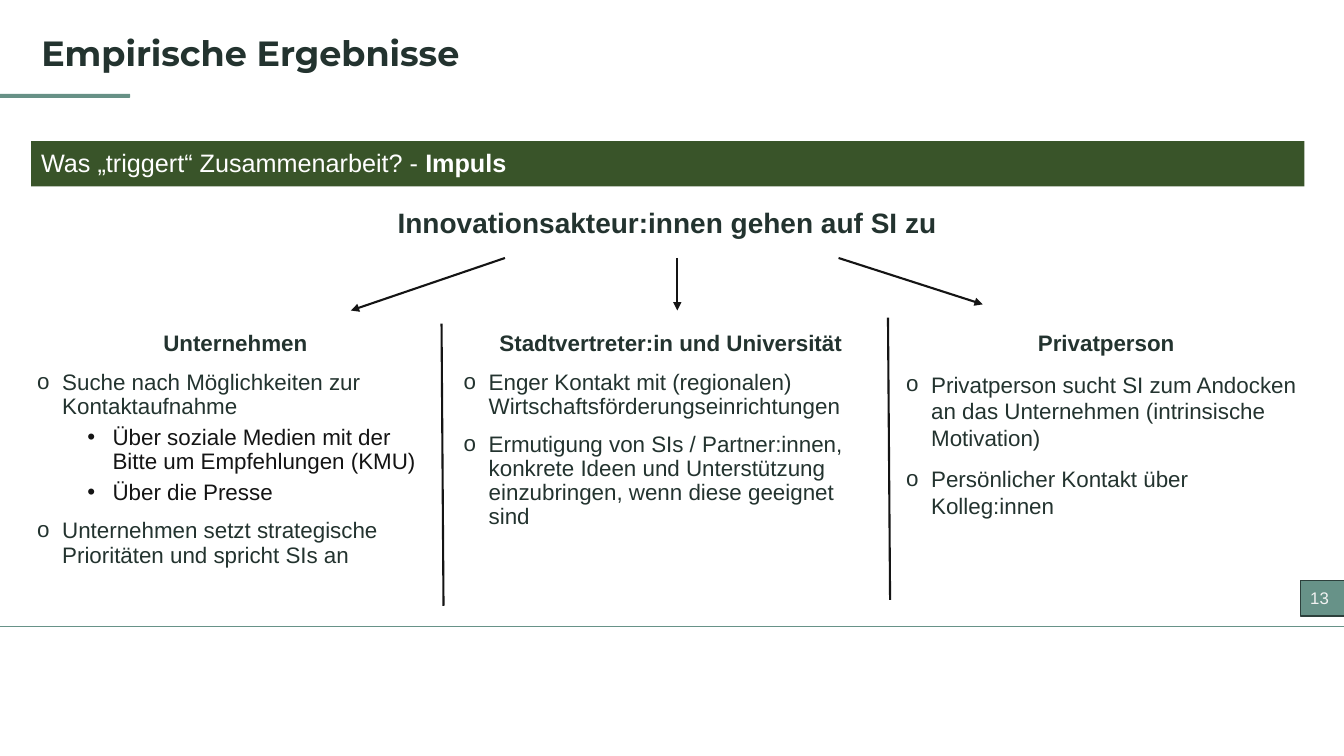
from dataclasses import dataclass

from lxml import etree
from pptx import Presentation
from pptx import util as u
from pptx.dml import color
from pptx.enum import shapes, text
from pptx.oxml import ns


@dataclass(frozen=True)
class Theme:
    dark: str = "23332F"
    ink: str = "141414"
    sage: str = "679288"
    mark: str = "679186"
    edge: str = "2D403C"
    green: str = "395429"
    white: str = "FFFFFF"
    pale: str = "F2F2F2"
    head: str = "Montserrat"
    body: str = "Arial"
    title: int = 25
    lead: int = 20
    bar: int = 18
    base: int = 16
    small: int = 12


@dataclass(frozen=True)
class Box:
    left: float
    top: float
    width: float
    height: float

    def place(self) -> tuple:
        return tuple(u.Pt(n) for n in (self.left, self.top, self.width, self.height))


@dataclass(frozen=True)
class Item:
    words: str
    deep: bool = False


@dataclass(frozen=True)
class Column:
    left: float
    width: float
    head: str
    items: tuple
    pitch: float = 0.9


@dataclass(frozen=True)
class Line:
    start: tuple
    end: tuple
    tint: str
    weight: float
    arrow: bool = False


LOOK = Theme()
COL_TOP, COL_HIGH = 234, 213

COLUMNS = (
    Column(19.4, 297.4, "Unternehmen", (
        Item("Suche nach Möglichkeiten zur Kontaktaufnahme"),
        Item("Über soziale Medien mit der Bitte um Empfehlungen (KMU)", True),
        Item("Über die Presse", True),
        Item("Unternehmen setzt strategische Prioritäten und spricht SIs an"),
    )),
    Column(324, 310.3, "Stadtvertreter:in und Universität", (
        Item("Enger Kontakt mit (regionalen) Wirtschaftsförderungseinrichtungen"),
        Item("Ermutigung von SIs / Partner:innen, konkrete Ideen und Unterstützung "
             "einzubringen, wenn diese geeignet sind"),
    )),
    Column(640.1, 300.2, "Privatperson", (
        Item("Privatperson sucht SI zum Andocken an das Unternehmen "
             "(intrinsische Motivation)"),
        Item("Persönlicher Kontakt über Kolleg:innen"),
    ), 1.0),
)

LINES = (
    Line((-5.8, 447.8), (967.7, 447.8), LOOK.sage, 0.75),
    Line((315.4, 231.1), (316.8, 432.7), LOOK.ink, 1.5),
    Line((634.3, 226.8), (635.8, 428.4), LOOK.ink, 1.5),
    Line((360.7, 184.3), (250.6, 221.8), LOOK.ink, 1.5, True),
    Line((599, 184.3), (702, 217.4), LOOK.ink, 1.5, True),
    Line((483.8, 184.3), (483.8, 221.8), LOOK.ink, 1.5, True),
)


def rgb(tint: str) -> color.RGBColor:
    return color.RGBColor.from_string(tint)


def style(para, size: float, tint: str, bold: bool = False, face: str = LOOK.body) -> None:
    for run in para.runs:
        run.font.size = u.Pt(size)
        run.font.name = face
        run.font.bold = bold
        run.font.color.rgb = rgb(tint)


def bullet(para, sign: str, left: float, hang: float) -> None:
    props = para._p.get_or_add_pPr()
    props.set("marL", str(u.Pt(left)))
    props.set("indent", str(-u.Pt(hang)))
    etree.SubElement(props, ns.qn("a:buFont")).set("typeface", LOOK.body)
    etree.SubElement(props, ns.qn("a:buChar")).set("char", sign)


def add_shape(slide, kind, box: Box, fill: str, edge: str = ""):
    shape = slide.shapes.add_shape(kind, *box.place())
    shape.shadow.inherit = False
    shape.fill.solid()
    shape.fill.fore_color.rgb = rgb(fill)
    if edge:
        shape.line.color.rgb = rgb(edge)
        shape.line.width = u.Pt(1)
    else:
        shape.line.fill.background()
    return shape


def add_text(slide, box: Box, words: str):
    frame = slide.shapes.add_textbox(*box.place()).text_frame
    frame.word_wrap = True
    frame.text = words
    return frame


def add_line(slide, line: Line) -> None:
    ends = (u.Pt(n) for n in line.start + line.end)
    link = slide.shapes.add_connector(shapes.MSO_CONNECTOR.STRAIGHT, *ends)
    link.line.color.rgb = rgb(line.tint)
    link.line.width = u.Pt(line.weight)
    if line.arrow:
        tail = etree.SubElement(link.line._get_or_add_ln(), ns.qn("a:tailEnd"))
        tail.set("type", "triangle")
    etree.SubElement(link._element.spPr, ns.qn("a:effectLst"))


def add_column(slide, col: Column) -> None:
    box = Box(col.left, COL_TOP, col.width, COL_HIGH)
    rows = [col.head] + [item.words for item in col.items]
    head, *paras = add_text(slide, box, "\n".join(rows)).paragraphs
    head.alignment = text.PP_ALIGN.CENTER
    head.line_spacing = 0.9
    style(head, LOOK.base, LOOK.dark, True)
    for para, item in zip(paras, col.items):
        bullet(para, "•" if item.deep else "o", 54 if item.deep else 18, 18)
        para.level = int(item.deep)
        para.line_spacing = col.pitch
        para.space_before = u.Pt(5 if item.deep else 10)
        style(para, LOOK.base, LOOK.ink if item.deep else LOOK.dark)


def add_title(slide) -> None:
    title = slide.shapes.title
    title.left, title.top, title.width, title.height = Box(22.3, 22.3, 566.6, 37.4).place()
    frame = title.text_frame
    frame.text = "Empirische Ergebnisse"
    frame.auto_size = text.MSO_AUTO_SIZE.NONE
    frame.vertical_anchor = text.MSO_ANCHOR.TOP
    para = frame.paragraphs[0]
    para.alignment = text.PP_ALIGN.LEFT
    para.line_spacing = 0.9
    style(para, LOOK.title, LOOK.dark, True, LOOK.head)


def add_bands(slide) -> None:
    kinds = shapes.MSO_SHAPE
    add_shape(slide, kinds.ROUNDED_RECTANGLE, Box(-7.2, 67, 100.1, 2.9), LOOK.mark)
    bar = add_shape(slide, kinds.RECTANGLE, Box(22.3, 100.8, 909.4, 32.4), LOOK.green)
    badge = add_shape(slide, kinds.RECTANGLE, Box(928.8, 414.7, 37.4, 25.2),
                      LOOK.sage, LOOK.edge)
    bar.text_frame.text = "Was „triggert“ Zusammenarbeit? - "
    bar.text_frame.margin_top = u.Pt(5)
    query = bar.text_frame.paragraphs[0]
    query.add_run().text = "Impuls"
    query.line_spacing = 0.9
    style(query, LOOK.bar, LOOK.white)
    query.runs[-1].font.bold = True
    badge.text_frame.text = "13"
    page = badge.text_frame.paragraphs[0]
    style(page, LOOK.small, LOOK.pale)
    for para in (query, page):
        para.alignment = text.PP_ALIGN.LEFT


def main() -> None:
    deck = Presentation()
    deck.slide_width, deck.slide_height = u.Pt(960), u.Pt(540)
    slide = deck.slides.add_slide(deck.slide_layouts[5])
    add_title(slide)
    add_bands(slide)
    lead = add_text(slide, Box(21.6, 146.2, 910.1, 37.4),
                    "Innovationsakteur:innen gehen auf SI zu").paragraphs[0]
    lead.alignment = text.PP_ALIGN.CENTER
    lead.line_spacing = 0.9
    style(lead, LOOK.lead, LOOK.dark, True)
    for col in COLUMNS:
        add_column(slide, col)
    for line in LINES:
        add_line(slide, line)
    deck.save("out.pptx")


if __name__ == "__main__":
    main()
